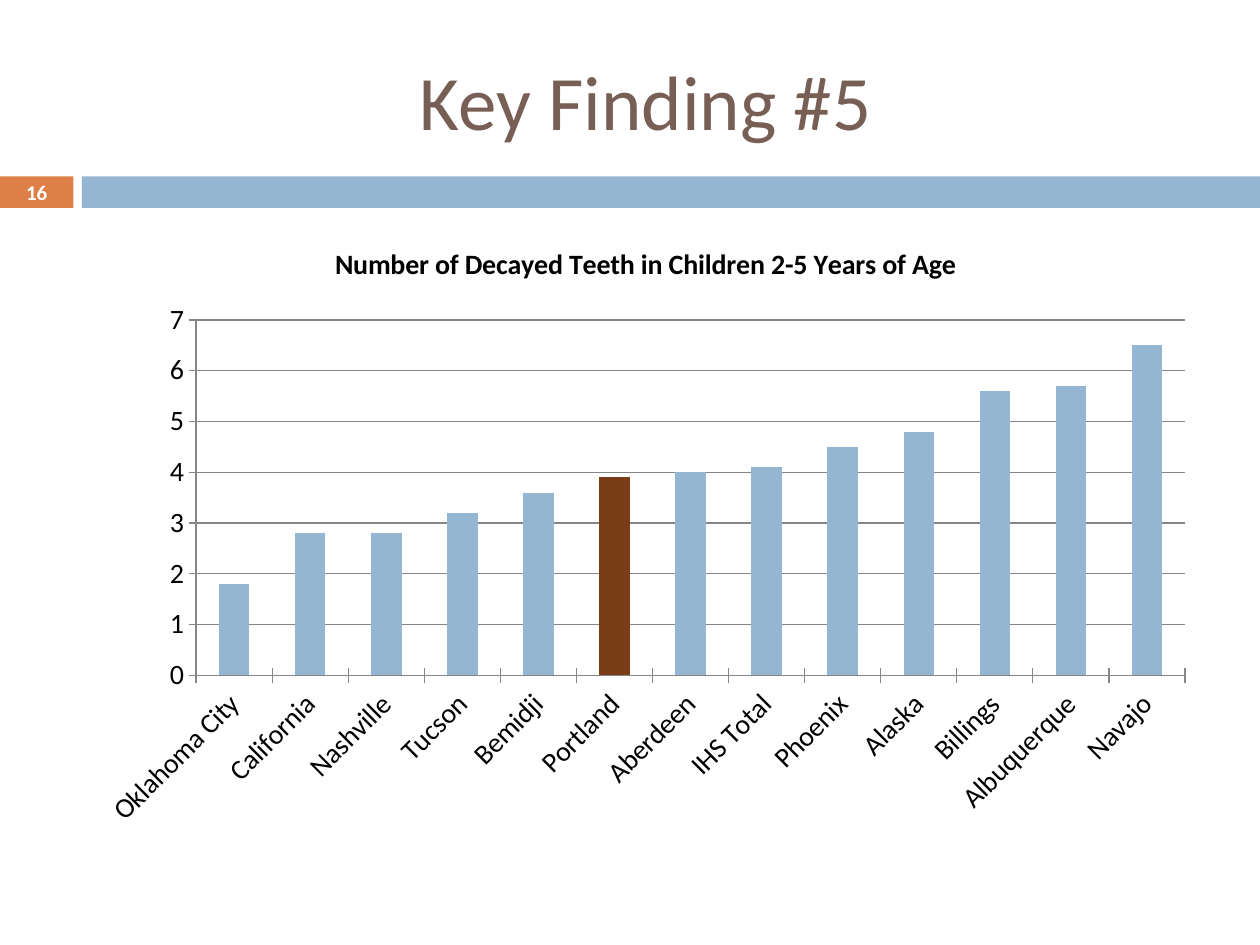
from pptx import Presentation
from pptx.chart.data import CategoryChartData
from pptx.dml.color import RGBColor
from pptx.enum.chart import XL_CHART_TYPE as ChartType, XL_TICK_MARK as TickMark
from pptx.enum.shapes import MSO_SHAPE as Shape
from pptx.enum.text import MSO_ANCHOR as Anchor, PP_ALIGN as Align
from pptx.oxml.ns import qn
from pptx.util import Pt

TITLE = "Key Finding #5"
PAGE_NUMBER = "16"
CHART_TITLE = "Number of Decayed Teeth in Children 2-5 Years of Age"
DECAYED_TEETH = [
    ("Oklahoma City", 1.8),
    ("California", 2.8),
    ("Nashville", 2.8),
    ("Tucson", 3.2),
    ("Bemidji", 3.6),
    ("Portland", 3.9),
    ("Aberdeen", 4),
    ("IHS Total", 4.1),
    ("Phoenix", 4.5),
    ("Alaska", 4.8),
    ("Billings", 5.6),
    ("Albuquerque", 5.7),
    ("Navajo", 6.5),
]
HIGHLIGHT = "Portland"

FONT = "Calibri"
ORANGE = RGBColor(0xDD, 0x80, 0x47)
BLUE = RGBColor(0x94, 0xB6, 0xD2)
TAUPE = RGBColor(0x77, 0x5F, 0x55)
BROWN = RGBColor(0x7B, 0x3D, 0x17)
GRAY = RGBColor(0x86, 0x86, 0x86)
BLACK = RGBColor(0, 0, 0)
WHITE = RGBColor(0xFF, 0xFF, 0xFF)

SLIDE_WIDTH, SLIDE_HEIGHT = Pt(720), Pt(540)
LEFT, WIDTH = Pt(48), Pt(642)
BAND_TOP, BAND_HEIGHT = Pt(100.8), Pt(18)
NUMBER_WIDTH, BAND_LEFT = Pt(42), Pt(46.8)


def set_font(font, size, color, bold=False):
    font.name = FONT
    font.size = Pt(size)
    font.bold = bold
    font.color.rgb = color


def write_centered(shape, text, size, color, bold=False):
    frame = shape.text_frame
    frame.text = text
    frame.word_wrap = True
    frame.vertical_anchor = Anchor.MIDDLE
    paragraph = frame.paragraphs[0]
    paragraph.alignment = Align.CENTER
    set_font(paragraph.runs[0].font, size, color, bold)


def add_band(slide, left, width, color):
    band = slide.shapes.add_shape(Shape.RECTANGLE, left, BAND_TOP, width, BAND_HEIGHT)
    band.shadow.inherit = False
    band.fill.solid()
    band.fill.fore_color.rgb = color
    band.line.fill.background()


def add_teeth_chart(slide):
    names, values = zip(*DECAYED_TEETH)
    data = CategoryChartData()
    data.categories = names
    data.add_series("Series 1", values)
    chart = slide.shapes.add_chart(
        ChartType.COLUMN_CLUSTERED, LEFT, Pt(126), WIDTH, Pt(354), data).chart
    set_font(chart.font, 18, BLACK)
    chart.has_legend = False

    chart.has_title = True
    chart.chart_title.include_in_layout = False
    heading = chart.chart_title.text_frame
    heading.text = CHART_TITLE
    set_font(heading.paragraphs[0].runs[0].font, 16, BLACK, bold=True)

    for axis in (chart.category_axis, chart.value_axis):
        axis.major_tick_mark = TickMark.CROSS
        axis.format.line.color.rgb = GRAY
        set_font(axis.tick_labels.font, 16, BLACK)
    label_body = chart.category_axis._element.find(qn("c:txPr")).find(qn("a:bodyPr"))
    label_body.set("rot", str(-45 * 60000))

    value_axis = chart.value_axis
    value_axis.minimum_scale, value_axis.maximum_scale = 0, 7
    value_axis.major_unit = 1
    value_axis.has_major_gridlines = True
    value_axis.major_gridlines.format.line.color.rgb = GRAY

    plot = chart.plots[0]
    plot.gap_width = 150
    plot.vary_by_categories = False
    series = plot.series[0]
    highlighted = series.points[names.index(HIGHLIGHT)]
    for part, color in ((series, BLUE), (highlighted, BROWN)):
        part.format.fill.solid()
        part.format.fill.fore_color.rgb = color


def main():
    presentation = Presentation()
    presentation.slide_width, presentation.slide_height = SLIDE_WIDTH, SLIDE_HEIGHT
    slide = presentation.slides.add_slide(presentation.slide_layouts[5])

    add_band(slide, 0, NUMBER_WIDTH, ORANGE)
    add_band(slide, BAND_LEFT, SLIDE_WIDTH - BAND_LEFT, BLUE)

    title = slide.shapes.title
    title.left, title.top, title.width, title.height = LEFT, Pt(18), WIDTH, Pt(78)
    write_centered(title, TITLE, 44, TAUPE)

    number = slide.shapes.add_textbox(0, Pt(100), NUMBER_WIDTH, Pt(19.5))
    write_centered(number, PAGE_NUMBER, 12, WHITE, bold=True)

    add_teeth_chart(slide)
    presentation.save("out.pptx")


if __name__ == "__main__":
    main()
